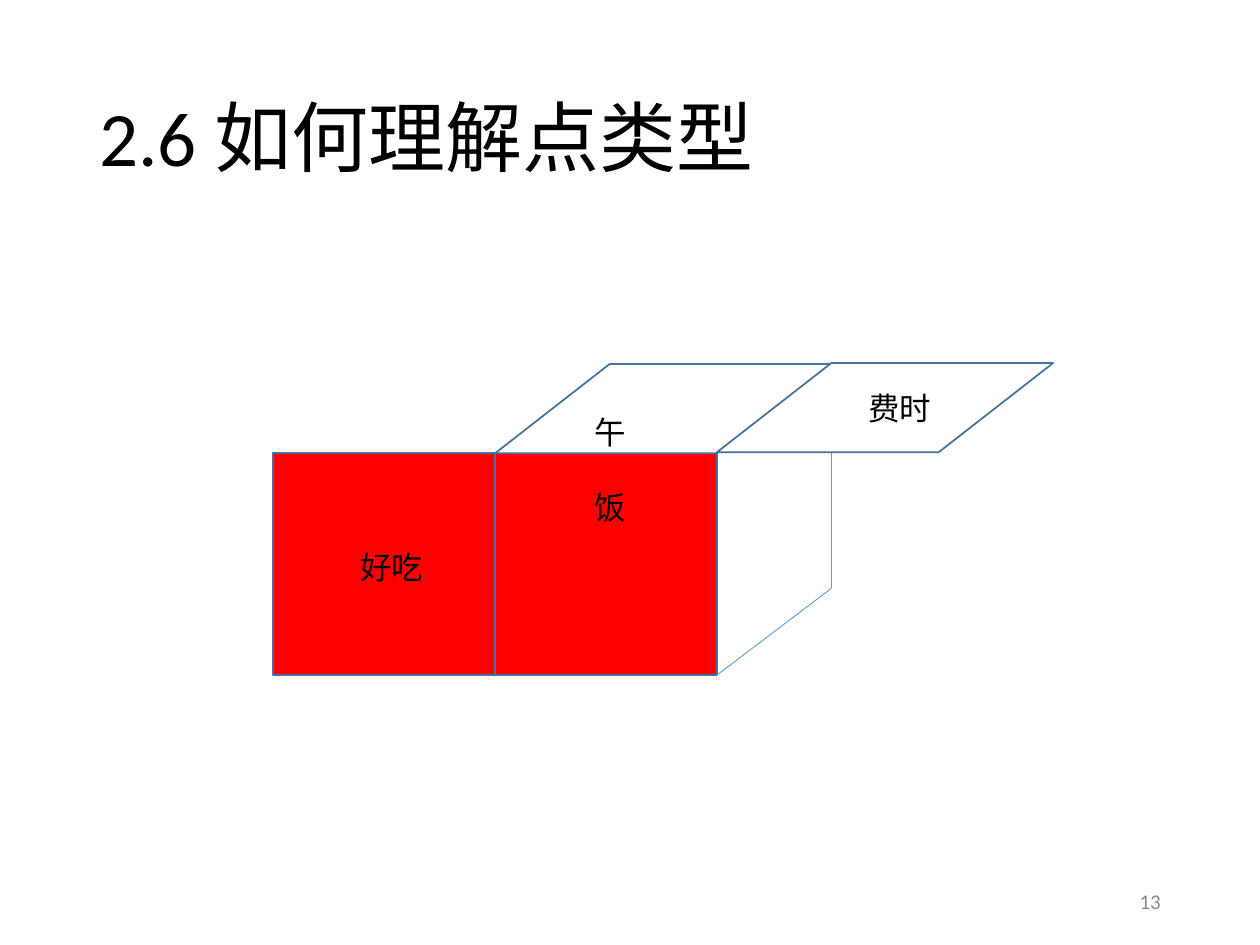
from lxml import etree
from pptx import Presentation
from pptx.dml.color import RGBColor
from pptx.enum import shapes, text
from pptx.oxml.ns import qn
from pptx.util import Cm, Pt

BLACK = RGBColor(0x00, 0x00, 0x00)
WHITE = RGBColor(0xFF, 0xFF, 0xFF)
RED = RGBColor(0xFF, 0x00, 0x00)
GREY = RGBColor(0x8C, 0x8C, 0x8C)
OUTLINE = RGBColor(0x43, 0x73, 0x9E)
EDGE = RGBColor(0x5B, 0x9B, 0xD5)
FONT = "Calibri"

TITLE = "2.6 如何理解点类型"
PAGE_NUMBER = "13"
# words (one paragraph each), left, top, height in cm
LABELS = [
    (["费时"], 17.25, 7.72, 1.02),
    (["好吃"], 7.01, 10.92, 1.02),
    (["午", "饭"], 11.73, 8.2, 2.57),
]
LABEL_WIDTH = 1.8

# Cube geometry in cm
SIDE = 4.47
DEPTH, RISE = 2.31, 1.8
LEFT, TOP = 5.51, 9.14
MIDDLE, RIGHT = LEFT + SIDE, LEFT + 2 * SIDE
BOTTOM = TOP + SIDE
BACK_X, BACK_BOTTOM = RIGHT + DEPTH, 11.86


def add_edge(slide, x1, y1, x2, y2):
    edge = slide.shapes.add_connector(
        shapes.MSO_CONNECTOR.STRAIGHT, Cm(x1), Cm(y1), Cm(x2), Cm(y2))
    edge.line.color.rgb = EDGE
    edge.line.width = Pt(0.5)
    etree.SubElement(edge._element.spPr, qn("a:effectLst"))


def add_face(slide, kind, left, top, width, height, fill):
    face = slide.shapes.add_shape(kind, Cm(left), Cm(top), Cm(width), Cm(height))
    face.shadow.inherit = False
    face.fill.solid()
    face.fill.fore_color.rgb = fill
    face.line.color.rgb = OUTLINE
    face.line.width = Pt(1)
    return face


def add_words(slide, words, left, top, width, height, size, color=BLACK,
              anchor=text.MSO_ANCHOR.TOP, align=text.PP_ALIGN.LEFT,
              line_spacing=1.0, gap=0):
    box = slide.shapes.add_textbox(Cm(left), Cm(top), Cm(width), Cm(height))
    frame = box.text_frame
    frame.word_wrap = True
    frame.vertical_anchor = anchor
    for i, word in enumerate(words):
        paragraph = frame.paragraphs[0] if i == 0 else frame.add_paragraph()
        paragraph.alignment = align
        paragraph.line_spacing = line_spacing
        if i:
            paragraph.space_before = Pt(gap)
        run = paragraph.add_run()
        run.text = word
        run.font.name = FONT
        run.font.size = Pt(size)
        run.font.color.rgb = color


def main():
    deck = Presentation()
    deck.slide_width, deck.slide_height = Cm(25.4), Cm(19.05)
    slide = deck.slides.add_slide(deck.slide_layouts[6])

    add_edge(slide, BACK_X, TOP - RISE, BACK_X, BACK_BOTTOM)
    add_words(slide, [TITLE], 1.75, 1.02, 21.9, 3.68, 44,
              anchor=text.MSO_ANCHOR.MIDDLE, line_spacing=0.9)
    for left in (LEFT, MIDDLE):
        add_face(slide, shapes.MSO_SHAPE.RECTANGLE, left, TOP, SIDE, SIDE, RED)
    for left, top in ((MIDDLE, TOP - RISE), (RIGHT, TOP - RISE - 0.02)):
        lid = add_face(slide, shapes.MSO_SHAPE.PARALLELOGRAM,
                       left, top, SIDE + DEPTH, RISE, WHITE)
        lid.adjustments[0] = DEPTH / RISE
    add_edge(slide, RIGHT, BOTTOM, BACK_X, BACK_BOTTOM)

    for words, left, top, height in LABELS:
        add_words(slide, words, left, top, LABEL_WIDTH, height, 18, gap=21.5)
    add_words(slide, [PAGE_NUMBER], 17.93, 17.65, 5.72, 1.02, 12, GREY,
              text.MSO_ANCHOR.MIDDLE, text.PP_ALIGN.RIGHT)

    deck.save("out.pptx")


if __name__ == "__main__":
    main()
